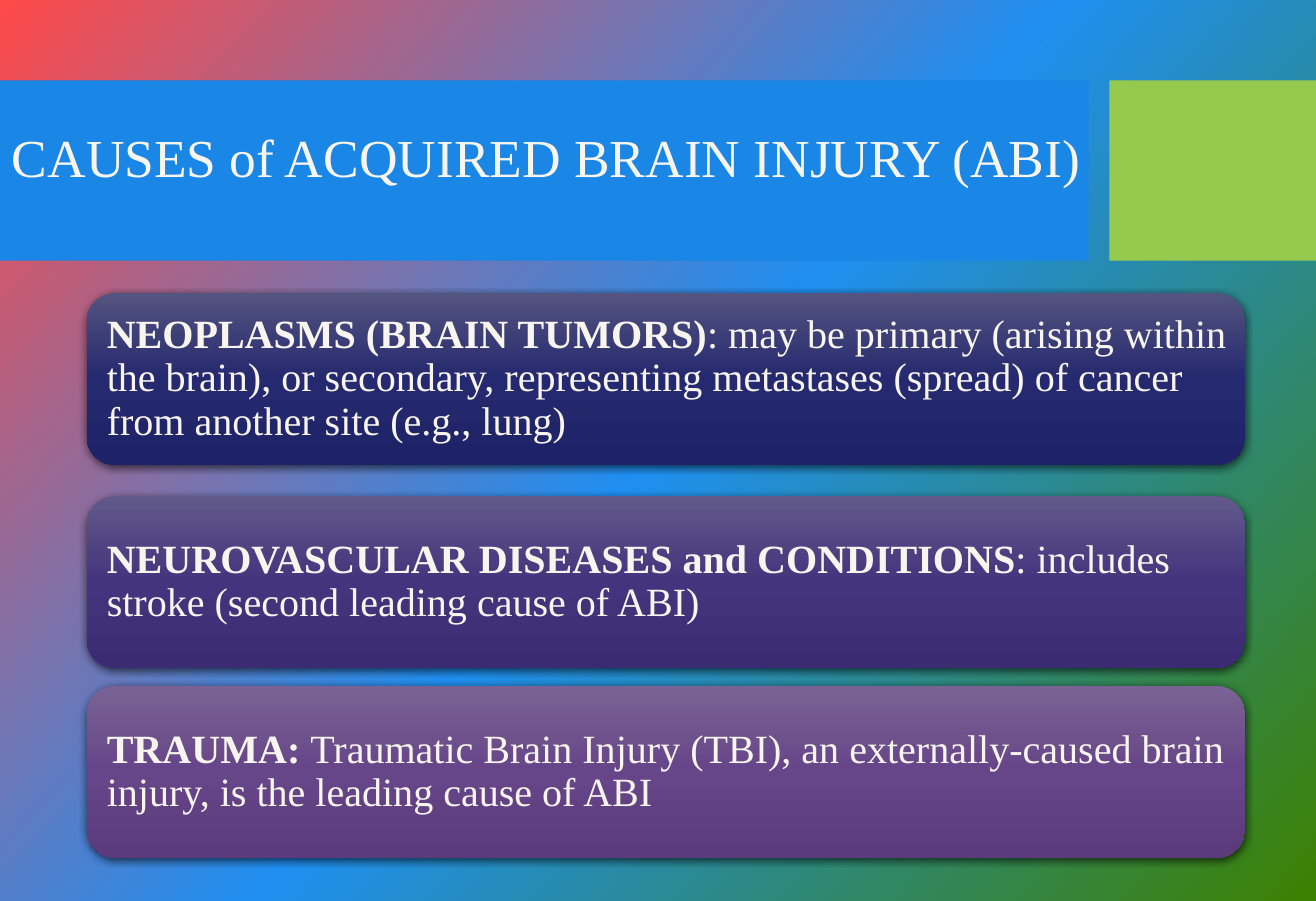
from copy import deepcopy
from pptx import Presentation, util as u
from pptx.dml.color import RGBColor
from pptx.enum import shapes, text
from pptx.oxml import parse_xml
from pptx.oxml.ns import nsdecls, qn

WIDE, HIGH = u.Inches(10.95), u.Inches(7.5)
COL, ROW = WIDE / 100, HIGH / 100
FONT = "Times New Roman"
HUES = {
    "text": "F8F5EF",
    "bar": "1A86E5",
    "side": "96CA4F",
    "back": ("FF4949", "1F8FF1", "3D8100"),
    "navy": ("53547F", "25296F", "1E2266"),
    "plum": ("62598A", "43347D", "3A2B72"),
    "mauve": ("7A6394", "664588", "5B3B7C"),
}
CARDS = [
    (32.53, "navy", "NEOPLASMS (BRAIN TUMORS)",
     ": may be primary (arising within the brain), or secondary, representing "
     "metastases (spread) of cancer from another site (e.g., lung)"),
    (55.07, "plum", "NEUROVASCULAR DISEASES and CONDITIONS",
     ": includes stroke (second leading cause of ABI)"),
    (76.13, "mauve", "TRAUMA: ",
     "Traumatic Brain Injury (TBI), an externally-caused brain injury, "
     "is the leading cause of ABI"),
]


def grid(x, y, w, h):
    """Turn columns and rows into slide lengths."""
    return [round(n) for n in (x * COL, y * ROW, w * COL, h * ROW)]


def blend(fill, root, hues, angle):
    """Give a fill three evenly spaced colours at a clockwise angle."""
    fill.gradient()
    fill.gradient_angle = 360 - angle
    stops = next(root.iter(qn("a:gsLst")))
    stops.append(deepcopy(stops[-1]))
    for i, (stop, hue) in enumerate(zip(fill.gradient_stops, hues)):
        stop.position = i / 2
        stop.color.rgb = RGBColor.from_string(hue)


def block(slide, kind, box):
    """Add a preset shape with no line or shadow."""
    shape = slide.shapes.add_shape(kind, *grid(*box))
    shape.shadow.inherit = False
    shape.line.fill.background()
    return shape


def band(slide, box, hue):
    """Add a plain rectangle."""
    fill = block(slide, shapes.MSO_SHAPE.RECTANGLE, box).fill
    fill.solid()
    fill.fore_color.rgb = RGBColor.from_string(HUES[hue])


def shade(shape):
    """Add a soft shadow below a shape."""
    shape.element.spPr.find(qn("a:effectLst")).append(parse_xml(
        f'<a:outerShdw {nsdecls("a")} blurRad="57150" dist="19050" '
        'dir="5400000" algn="ctr" rotWithShape="0"><a:srgbClr val="000000">'
        '<a:alpha val="63000"/></a:srgbClr></a:outerShdw>'))


def write(shape, size, runs):
    """Write one left-aligned paragraph, run by run."""
    frame = shape.text_frame
    frame.word_wrap = True
    frame.vertical_anchor = text.MSO_ANCHOR.MIDDLE
    frame.margin_left = frame.margin_top = frame.margin_bottom = u.Inches(0.1)
    frame.margin_right = u.Inches(0.08)
    para = frame.paragraphs[0]
    para.alignment = text.PP_ALIGN.LEFT
    para.line_spacing = 0.9
    for words, bold in runs:
        run = para.add_run()
        run.text = words
        run.font.name, run.font.size, run.font.bold = FONT, u.Pt(size), bold
        run.font.color.rgb = RGBColor.from_string(HUES["text"])


def card(slide, top, hue, head, body):
    """Add a rounded card with a bold lead-in."""
    shape = block(slide, shapes.MSO_SHAPE.ROUNDED_RECTANGLE,
                  (6.58, top, 88.04, 19.07))
    blend(shape.fill, shape.element, HUES[hue], 90)
    shade(shape)
    write(shape, 24, [(head, True), (body, False)])


def main():
    """Build and save the slide."""
    deck = Presentation()
    deck.slide_width, deck.slide_height = WIDE, HIGH
    slide = deck.slides.add_slide(deck.slide_layouts[6])
    blend(slide.background.fill, slide.element, HUES["back"], 42)
    band(slide, (0, 8.93, 82.74, 20), "bar")
    band(slide, (84.29, 8.93, 15.71, 20), "side")
    title = slide.shapes.add_textbox(*grid(0, 6.67, 86.48, 22.27))
    write(title, 32, [("CAUSES of ACQUIRED BRAIN INJURY (ABI)", False)])
    for item in CARDS:
        card(slide, *item)
    deck.save("out.pptx")


if __name__ == "__main__":
    main()
